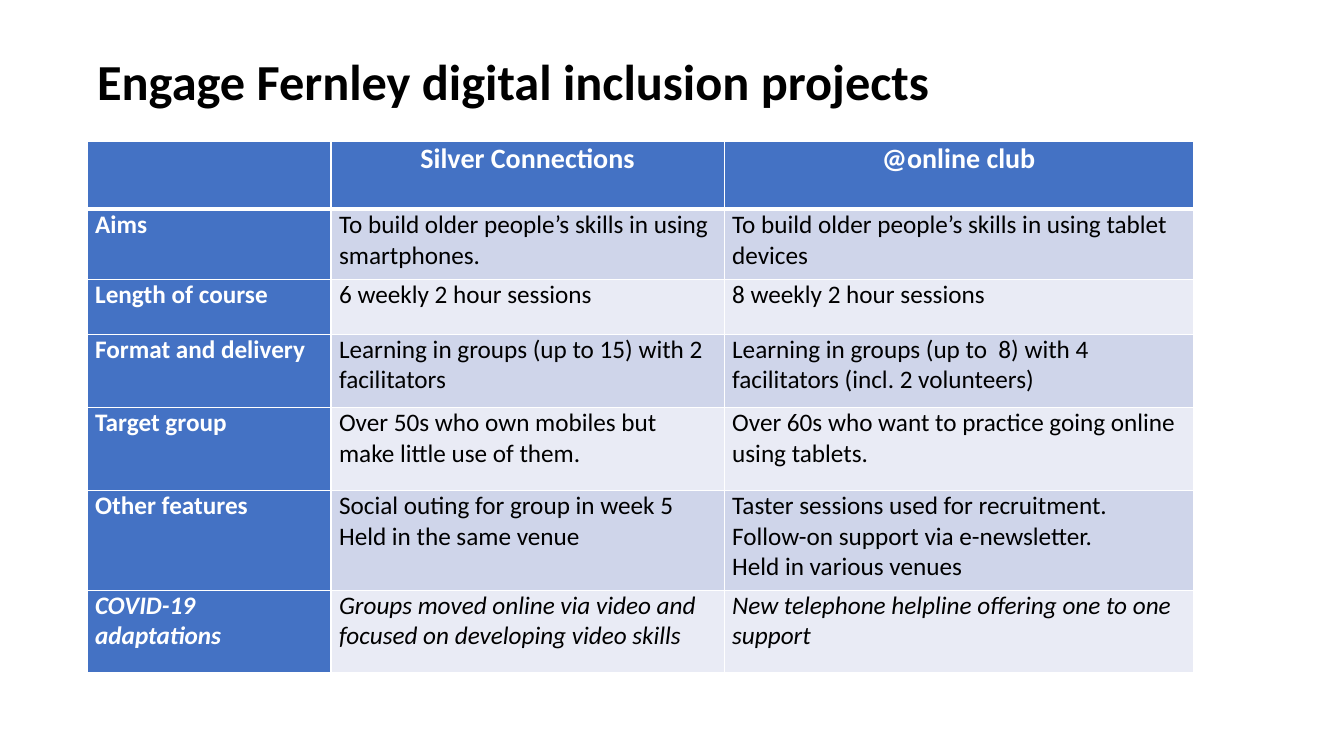
from lxml.etree import SubElement
from pptx import Presentation
from pptx.dml.color import RGBColor
from pptx.enum.text import MSO_ANCHOR as Anchor, PP_ALIGN as Align
from pptx.oxml.ns import qn
from pptx.util import Inches, Pt

WHITE, BLACK, BLUE = "FFFFFF", "000000", "4472C4"
BANDS = ["CFD5EA", "E9EBF5"]
COLUMN_SHARES = [18.15, 29.25, 34.9]
ROW_SHARES = [8.93, 9.33, 7.2, 9.73, 10.93, 13.2, 10.93]
PROJECTS = [
    ["", "Silver Connections", "@online club"],
    ["Aims", "To build older people’s skills in using smartphones.",
     "To build older people’s skills in using tablet devices"],
    ["Length of course", "6 weekly 2 hour sessions", "8 weekly 2 hour sessions"],
    ["Format and delivery", "Learning in groups (up to 15) with 2 facilitators",
     "Learning in groups (up to  8) with 4 facilitators (incl. 2 volunteers)"],
    ["Target group", "Over 50s who own mobiles but make little use of them.",
     "Over 60s who want to practice going online using tablets."],
    ["Other features", "Social outing for group in week 5\nHeld in the same venue",
     "Taster sessions used for recruitment.\nFollow-on support via e-newsletter.\nHeld in various venues"],
    ["COVID-19 adaptations",
     "Groups moved online via video and focused on developing video skills",
     "New telephone helpline offering one to one support"],
]


def color(value):
    return RGBColor.from_string(value)


def set_all(target, values):
    for name, value in values.items():
        setattr(target, name, value)


def write(frame, text, ink, font, layout):
    for index, line in enumerate(text.split("\n")):
        para = frame.paragraphs[0] if index == 0 else frame.add_paragraph()
        set_all(para, layout)
        span = para.add_run()
        span.text = line
        set_all(span.font, {"name": "Calibri", **font})
        span.font.color.rgb = color(ink)


def add_borders(cell, bottom_width):
    props = cell._tc.get_or_add_tcPr()
    widths = {"a:lnL": 1, "a:lnR": 1, "a:lnT": 1, "a:lnB": bottom_width}
    for index, (tag, width) in enumerate(widths.items()):
        line = props.makeelement(qn(tag), {"w": str(Pt(width))})
        fill = SubElement(line, qn("a:solidFill"))
        SubElement(fill, qn("a:srgbClr"), val=WHITE)
        props.insert(index, line)


def format_cell(cell, text, row, column):
    header, label = row == 0, column == 0
    cell.fill.solid()
    cell.fill.fore_color.rgb = color(BLUE if header or label else BANDS[(row - 1) % 2])
    add_borders(cell, 3 if header else 1)
    if not text:
        return
    set_all(cell, {"margin_left": Inches(0.08), "margin_right": Inches(0.08),
                   "margin_top": 0, "margin_bottom": 0})
    font = {"size": Pt(20 if header else 18), "bold": header or label,
            "italic": row == len(PROJECTS) - 1}
    layout = {"alignment": Align.CENTER if header else Align.LEFT}
    if (row, column) == (1, 1):
        layout["space_after"] = Pt(6)
    write(cell.text_frame, text, WHITE if header or label else BLACK, font, layout)


def add_title(page, box, text):
    title = page.shapes.title
    set_all(title, dict(zip(["left", "top", "width", "height"], box)))
    set_all(title.text_frame, {"vertical_anchor": Anchor.MIDDLE, "word_wrap": True})
    write(title.text_frame, text, BLACK, {"size": Pt(36), "bold": True},
          {"alignment": Align.LEFT, "line_spacing": 0.9})


def add_project_table(page, left, top, widths, heights):
    table = page.shapes.add_table(len(heights), len(widths), left, top,
                                  sum(widths), sum(heights)).table
    for column, width in zip(table.columns, widths):
        column.width = width
    for row, height in zip(table.rows, heights):
        row.height = height
    for row, texts in enumerate(PROJECTS):
        for column, text in enumerate(texts):
            format_cell(table.cell(row, column), text, row, column)


def main():
    deck = Presentation()
    set_all(deck, {"slide_width": Inches(13.33), "slide_height": Inches(7.5)})
    page = deck.slides.add_slide(deck.slide_layouts[5])

    def across(share):
        return int(deck.slide_width * share / 100)

    def down(share):
        return int(deck.slide_height * share / 100)

    left = across(6.48)
    add_title(page, [left, down(1.47), across(86.25), down(19.33)],
              "Engage Fernley digital inclusion projects")
    add_project_table(page, left, down(18.75),
                      [across(share) for share in COLUMN_SHARES],
                      [down(share) for share in ROW_SHARES])
    deck.save("out.pptx")


if __name__ == "__main__":
    main()
